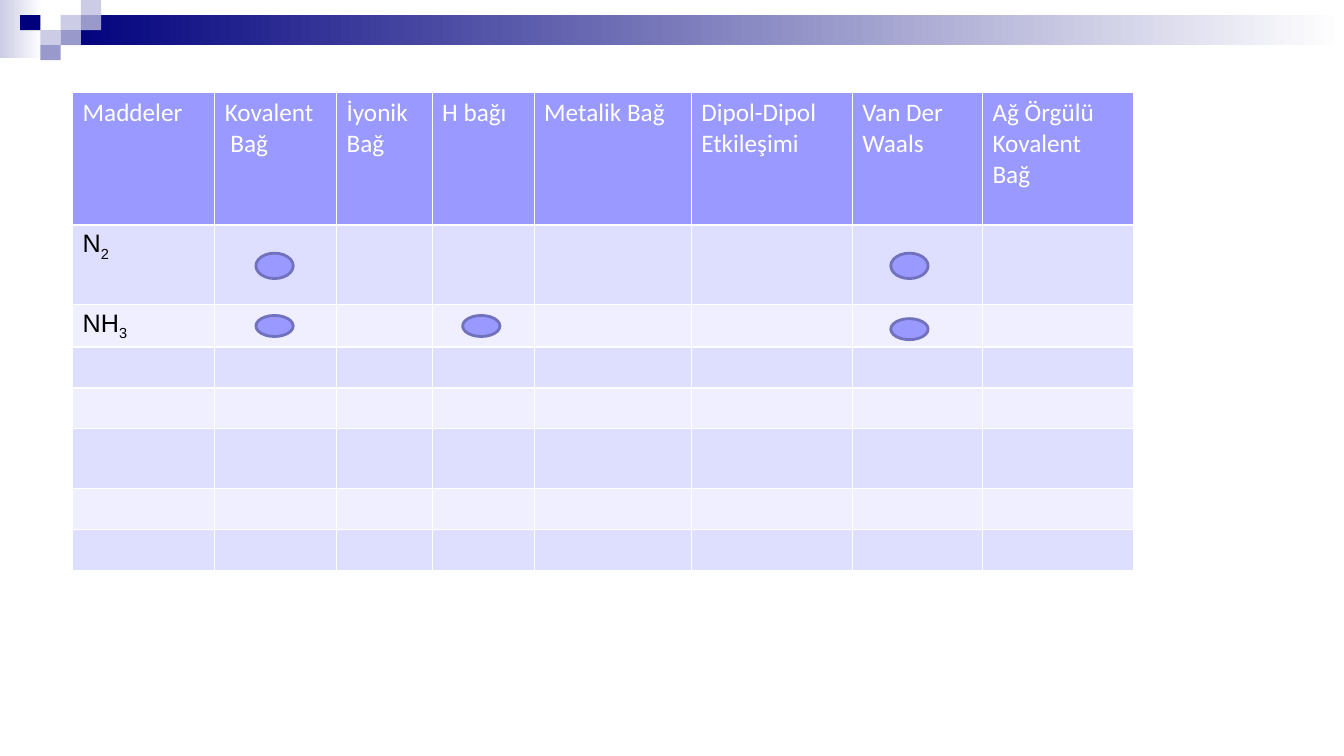
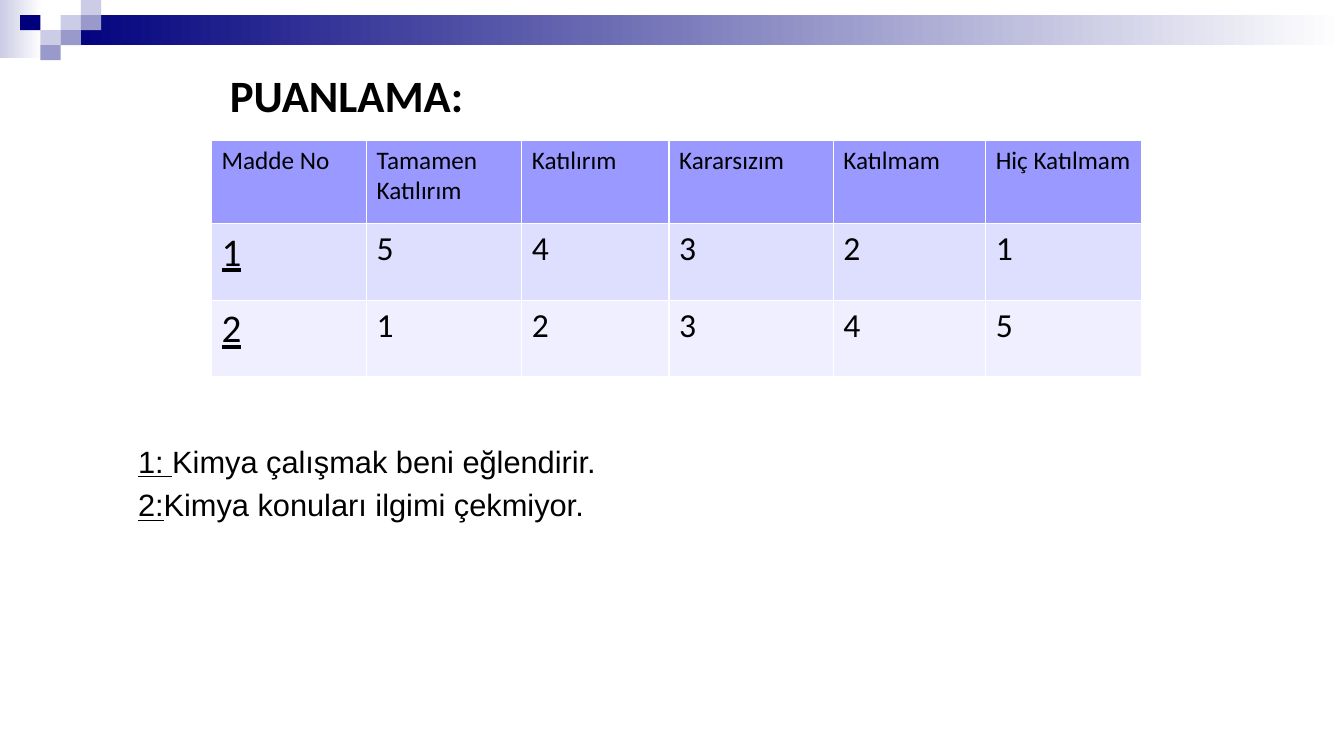
"""Build two chemistry slides: a bond type grid and a scoring key."""
from dataclasses import dataclass

from lxml import etree
from pptx import Presentation
from pptx import util as u
from pptx.dml.color import RGBColor
from pptx.enum import shapes, text
from pptx.oxml import ns


@dataclass(frozen=True)
class Theme:
    """Colours, fonts and type sizes of the deck."""
    navy: str = "00007D"
    lilac: str = "9999CC"
    mist: str = "CCCCE6"
    white: str = "FFFFFF"
    ink: str = "000000"
    header: str = "9999FF"
    bands: tuple[str, str] = ("DEDEFF", "EFEFFF")
    marker_line: str = "7171BD"
    heading_font: str = "Calibri"
    body_font: str = "Arial"
    title_size: int = 32
    item_size: int = 28
    score_size: int = 24
    note_size: int = 22
    table_size: int = 18


THEME = Theme()


@dataclass(frozen=True)
class Box:
    """A rectangle in centimetres."""
    left: float
    top: float
    width: float
    height: float

    def lengths(self) -> tuple[u.Length, ...]:
        """Return the four sides as lengths."""
        return tuple(u.Cm(side) for side in (self.left, self.top, self.width, self.height))


@dataclass(frozen=True)
class Span:
    """A stretch of text with one format."""
    text: str
    size: int = THEME.table_size
    font: str = THEME.heading_font
    color: str = THEME.ink
    underline: bool = False
    subscript: bool = False


Paragraphs = list[list[Span]]


@dataclass(frozen=True)
class Grid:
    """A table with its place, sizes and cell contents."""
    left: float
    top: float
    columns: tuple[float, ...]
    rows: tuple[float, ...]
    cells: list[list[Paragraphs]]


SLIDE = Box(0, 0, 33.87, 19.05)
TILE_WIDTH, TILE_HEIGHT = 0.51, 0.38
TILES = (
    (3, 1, THEME.mist), (4, 0, THEME.mist), (4, 1, THEME.lilac), (2, 2, THEME.mist),
    (1, 1, THEME.navy), (3, 2, THEME.lilac), (2, 3, THEME.lilac),
)
FADES = (
    (Box(0, 0, 1.07, 1.47), THEME.mist),
    (Box(3 * TILE_WIDTH, TILE_HEIGHT, SLIDE.width - 3 * TILE_WIDTH, 2 * TILE_HEIGHT), THEME.navy),
)
MARKERS = (
    Box(6.45, 6.38, 0.94, 0.64), Box(22.45, 6.38, 0.94, 0.64),
    Box(6.45, 7.95, 0.94, 0.53), Box(22.45, 8.03, 0.94, 0.53), Box(11.66, 7.95, 0.94, 0.53),
)
BOND_HEADERS = (
    "Maddeler", "Kovalent\n Bağ", "İyonik Bağ", "H bağı", "Metalik Bağ",
    "Dipol-Dipol Etkileşimi", "Van Der Waals", "Ağ Örgülü Kovalent Bağ",
)
SCORE_HEADERS = (
    "Madde No", "Tamamen Katılırım", "Katılırım", "Kararsızım", "Katılmam", "Hiç Katılmam",
)
SCORES = (("1", "54321"), ("2", "12345"))
STATEMENTS = (("1: ", "Kimya çalışmak beni eğlendirir."), ("2:", "Kimya konuları ilgimi çekmiyor."))


def header_cells(labels: tuple[str, ...], color: str) -> list[Paragraphs]:
    """Turn labels into header cells, one paragraph a line."""
    return [[[Span(line, color=color)] for line in label.split("\n")] for label in labels]


def formula_cell(symbol: str, count: str) -> Paragraphs:
    """Return a chemical formula with a subscript."""
    return [[Span(symbol, font=THEME.body_font),
             Span(count, font=THEME.body_font, subscript=True)]]


def score_row(item: str, scores: str) -> list[Paragraphs]:
    """Return an underlined item number followed by its scores."""
    number = [[Span(item, THEME.item_size, underline=True)]]
    return [number] + [[[Span(score, THEME.score_size)]] for score in scores]


def write_paragraphs(frame, paragraphs: Paragraphs, space_before: float = 0) -> None:
    """Fill a text frame, spacing all paragraphs but the first."""
    for index, spans in enumerate(paragraphs):
        para = frame.add_paragraph() if index else frame.paragraphs[0]
        if index and space_before:
            para.space_before = u.Pt(space_before)
        for span in spans:
            run = para.add_run()
            run.text = span.text
            font = run.font
            font.name, font.size = span.font, u.Pt(span.size)
            font.bold, font.underline = False, span.underline
            font.color.rgb = RGBColor.from_string(span.color)
            if span.subscript:
                font._element.set("baseline", "-25000")


def draw_shape(page, kind: shapes.MSO_SHAPE, box: Box, fill: str, fade: bool = False):
    """Draw an unlined shape, plain or fading to white."""
    shape = page.shapes.add_shape(kind, *box.lengths())
    shape.shadow.inherit = False
    shape.line.fill.background()
    if fade:
        shape.fill.gradient()
        shape.fill.gradient_angle = 0
        for stop, color in zip(shape.fill.gradient_stops, (fill, THEME.white)):
            stop.color.rgb = RGBColor.from_string(color)
    else:
        shape.fill.solid()
        shape.fill.fore_color.rgb = RGBColor.from_string(fill)
    return shape


def decorate_master(deck, page) -> None:
    """Draw the banner on a page and move it to the slide master."""
    rectangle = shapes.MSO_SHAPE.RECTANGLE
    banner = [draw_shape(page, rectangle, box, color, fade=True) for box, color in FADES]
    for column, row, color in TILES:
        box = Box(column * TILE_WIDTH, row * TILE_HEIGHT, TILE_WIDTH, TILE_HEIGHT)
        banner.append(draw_shape(page, rectangle, box, color))
    for number, shape in enumerate(banner, start=100):
        shape.element.nvSpPr.cNvPr.id = number
        deck.slide_master.shapes.element.append(shape.element)


def set_borders(cell, color: str) -> None:
    """Give a cell a one-point line on each side."""
    properties = cell._tc.get_or_add_tcPr()
    for index, side in enumerate(("a:lnL", "a:lnR", "a:lnT", "a:lnB")):
        line = etree.Element(ns.qn(side), w=str(u.Pt(1)))
        fill = etree.SubElement(line, ns.qn("a:solidFill"))
        etree.SubElement(fill, ns.qn("a:srgbClr"), val=color)
        properties.insert(index, line)


def draw_grid(page, grid: Grid) -> None:
    """Draw a table with a header and banded rows."""
    box = Box(grid.left, grid.top, sum(grid.columns), sum(grid.rows))
    table = page.shapes.add_table(len(grid.rows), len(grid.columns), *box.lengths()).table
    for column, width in zip(table.columns, grid.columns):
        column.width = u.Cm(width)
    for index, (row, height) in enumerate(zip(table.rows, grid.rows)):
        row.height = u.Cm(height)
        color = THEME.bands[(index - 1) % 2] if index else THEME.header
        for cell in row.cells:
            cell.fill.solid()
            cell.fill.fore_color.rgb = RGBColor.from_string(color)
            set_borders(cell, THEME.white)
    for row, contents in zip(table.rows, grid.cells):
        for cell, paragraphs in zip(row.cells, contents):
            write_paragraphs(cell.text_frame, paragraphs)


def draw_title(page, wording: str, box: Box) -> None:
    """Place and format the title placeholder."""
    title = page.shapes.title
    title.left, title.top, title.width, title.height = box.lengths()
    frame = title.text_frame
    frame.text = wording
    frame.auto_size = text.MSO_AUTO_SIZE.NONE
    frame.vertical_anchor = text.MSO_ANCHOR.MIDDLE
    para = frame.paragraphs[0]
    para.alignment = text.PP_ALIGN.LEFT
    font = para.runs[0].font
    font.name, font.size, font.bold = THEME.heading_font, u.Pt(THEME.title_size), True
    font.color.rgb = RGBColor.from_string(THEME.ink)


def draw_bonds(page) -> None:
    """Draw the bond type grid and its markers."""
    draw_grid(page, Grid(
        1.83, 2.34,
        (3.58, 3.07, 2.41, 2.57, 3.96, 4.06, 3.28, 3.81),
        (3.33, 2.01, 1.02, 1.02, 1.02, 1.5, 1.02, 1.02),
        [header_cells(BOND_HEADERS, THEME.white),
         [formula_cell("N", "2")], [formula_cell("NH", "3")]],
    ))
    for box in MARKERS:
        marker = draw_shape(page, shapes.MSO_SHAPE.OVAL, box, THEME.header)
        marker.line.color.rgb = RGBColor.from_string(THEME.marker_line)
        marker.line.width = u.Pt(2)


def draw_scoring(page) -> None:
    """Draw the scoring key and its two statements."""
    draw_title(page, "PUANLAMA:", Box(5.54, 1.58, 21.59, 1.6))
    draw_grid(page, Grid(
        5.33, 3.53,
        (3.91, 3.91, 3.71, 4.14, 3.84, 3.92),
        (2.11, 1.93, 1.93),
        [header_cells(SCORE_HEADERS, THEME.ink)] + [score_row(*score) for score in SCORES],
    ))
    notes = page.shapes.add_textbox(*Box(3.23, 11.02, 22.66, 2.4).lengths())
    notes.text_frame.word_wrap = True
    write_paragraphs(notes.text_frame, [
        [Span(label, THEME.note_size, THEME.body_font, underline=True),
         Span(sentence, THEME.note_size, THEME.body_font)]
        for label, sentence in STATEMENTS
    ], space_before=5)


def main() -> None:
    """Build and save the deck."""
    deck = Presentation()
    deck.slide_width, deck.slide_height = u.Cm(SLIDE.width), u.Cm(SLIDE.height)
    bonds = deck.slides.add_slide(deck.slide_layouts.get_by_name("Blank"))
    decorate_master(deck, bonds)
    draw_bonds(bonds)
    draw_scoring(deck.slides.add_slide(deck.slide_layouts.get_by_name("Title Only")))
    deck.save("out.pptx")


if __name__ == "__main__":
    main()
